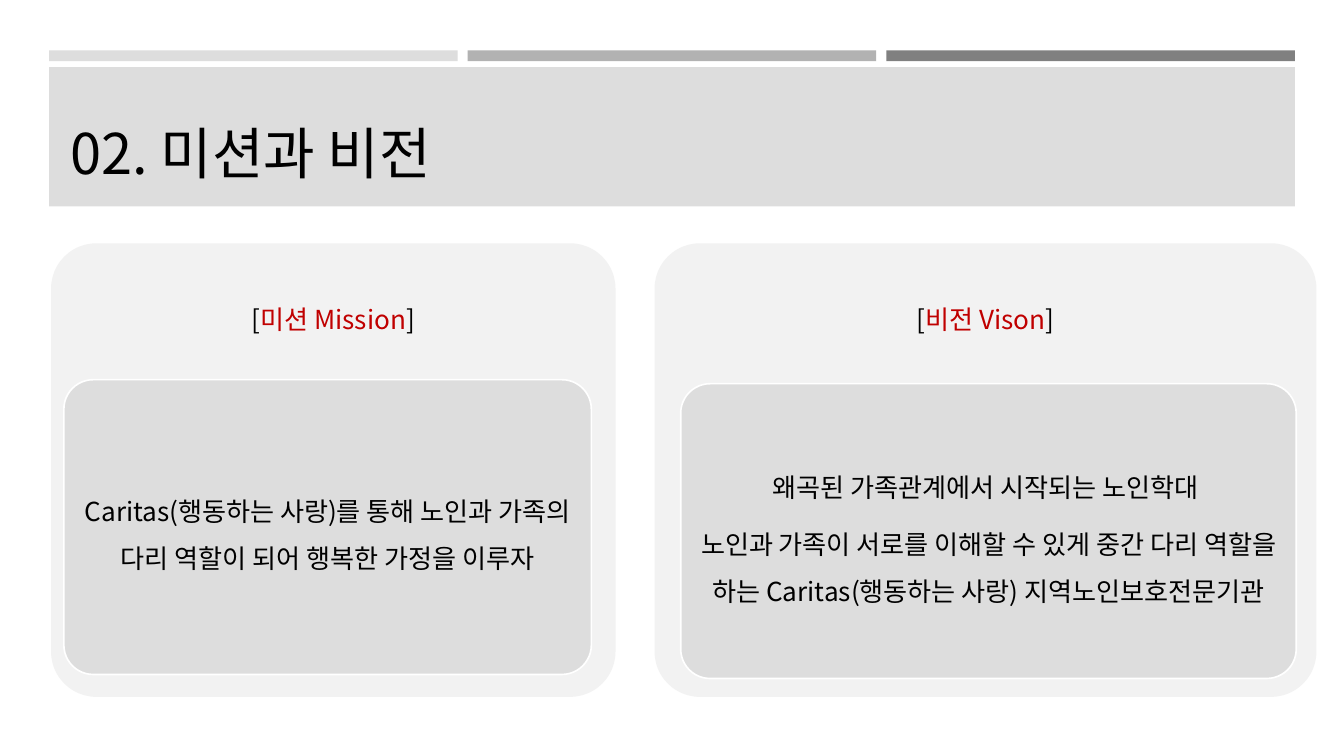
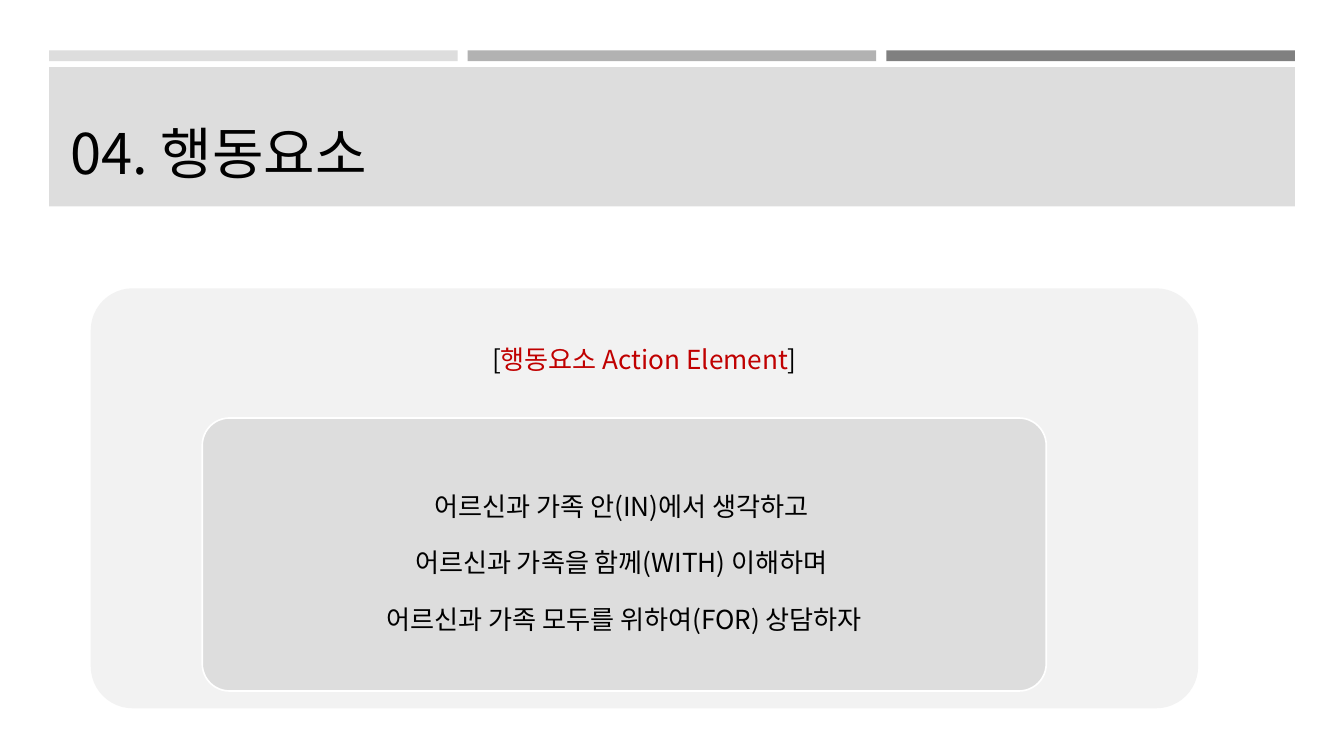
"""Build the mission, vision and action element slides."""
from dataclasses import dataclass

from lxml.etree import SubElement
from pptx import Presentation
from pptx.dml.color import RGBColor
from pptx.enum.shapes import MSO_SHAPE as Preset
from pptx.enum.text import MSO_ANCHOR as Anchor, MSO_AUTO_SIZE as AutoSize, PP_ALIGN as Align
from pptx.oxml.ns import qn
from pptx.util import Inches, Pt


@dataclass(frozen=True)
class Theme:
    font: str = "Noto Sans CJK KR"
    title_size: int = 60
    text_size: int = 28
    space_after: int = 10
    line_spacing: float = 1.5
    outline: float = 1.75
    text: str = "000000"
    accent: str = "C00000"
    light: str = "DDDDDD"
    medium: str = "B2B2B2"
    dark: str = "808080"
    panel: str = "F2F2F2"
    white: str = "FFFFFF"


THEME = Theme()
MARGIN, BAND_WIDTH, STRIP_WIDTH = 0.73, 18.54, 6.08
TITLE_BOX = (0.95, 1.15, 18.09, 1.66)
HEADING_SHARE, CARD_SHARE, CARD_INSET = 0.3, 0.65, 0.125

SLIDES = [
    {
        "title": "02. 미션과 비전",
        "panels": [
            {
                "box": (0.76, 3.62, 8.4, 6.75),
                "card": (0.95, 5.65, 7.85),
                "heading": "미션 Mission",
                "lines": ["Caritas(행동하는 사랑)를 통해 노인과 가족의 다리 역할이 되어 행복한 가정을 이루자"],
            },
            {
                "box": (9.74, 3.62, 9.85, 6.75),
                "card": (10.13, 5.71, 9.16),
                "heading": "비전 Vison",
                "lines": [
                    "왜곡된 가족관계에서 시작되는 노인학대 ",
                    "노인과 가족이 서로를 이해할 수 있게 중간 다리 역할을 하는 "
                    "Caritas(행동하는 사랑) 지역노인보호전문기관",
                ],
            },
        ],
    },
    {
        "title": "04. 행동요소",
        "panels": [
            {
                "box": (1.35, 4.29, 16.48, 6.25),
                "card": (3.01, 6.22, 12.56),
                "heading": "행동요소 Action Element",
                "lines": [
                    "어르신과 가족 안(IN)에서 생각하고 ",
                    "어르신과 가족을 함께(WITH) 이해하며 ",
                    "어르신과 가족 모두를 위하여(FOR) 상담하자",
                ],
            },
        ],
    },
]


def inches(box):
    return [Inches(value) for value in box]


def add_run(paragraph, text, size, color=THEME.text):
    run = paragraph.add_run()
    run.text = text
    run.font.size = Pt(size)
    run.font.name = THEME.font
    run.font.color.rgb = RGBColor.from_string(color)
    SubElement(run.font._element, qn("a:ea"), typeface=THEME.font)


def add_block(shapes, preset, box, fill, outline=None):
    shape = shapes.add_shape(preset, *inches(box))
    shape.shadow.inherit = False
    shape.fill.solid()
    shape.fill.fore_color.rgb = RGBColor.from_string(fill)
    if preset == Preset.ROUNDED_RECTANGLE:
        shape.adjustments[0] = 0.1
    if outline:
        shape.line.color.rgb = RGBColor.from_string(outline)
        shape.line.width = Pt(THEME.outline)
    else:
        shape.line.fill.background()
    return shape


def add_text(shapes, box, paragraphs, inset_x, inset_y):
    frame = shapes.add_textbox(*inches(box)).text_frame
    frame.word_wrap = True
    frame.vertical_anchor = Anchor.MIDDLE
    frame.margin_left = frame.margin_right = Inches(inset_x)
    frame.margin_top = frame.margin_bottom = Inches(inset_y)
    for index, runs in enumerate(paragraphs):
        paragraph = frame.add_paragraph() if index else frame.paragraphs[0]
        paragraph.alignment = Align.CENTER
        paragraph.line_spacing = THEME.line_spacing
        paragraph.space_after = Pt(THEME.space_after)
        for text, color in runs:
            add_run(paragraph, text, THEME.text_size, color)


def add_panel(slide, panel):
    shapes = slide.shapes.add_group_shape().shapes
    left, top, width, height = panel["box"]
    add_block(shapes, Preset.ROUNDED_RECTANGLE, panel["box"], THEME.panel)
    heading = [("[", THEME.text), (panel["heading"], THEME.accent), ("]", THEME.text)]
    add_text(shapes, (left, top, width, height * HEADING_SHARE), [heading], 0.12, 0.12)

    left, top, width = panel["card"]
    height *= CARD_SHARE
    add_block(shapes, Preset.ROUNDED_RECTANGLE, (left, top, width, height), THEME.light, THEME.white)
    text_box = (left + CARD_INSET, top + CARD_INSET, width - 2 * CARD_INSET, height - 2 * CARD_INSET)
    add_text(shapes, text_box, [[(line, THEME.text)] for line in panel["lines"]], 0.08, 0.06)


def style_layout(layout, slide):
    """Move the header band and strips behind the layout's title."""
    gap = (BAND_WIDTH - 3 * STRIP_WIDTH) / 2
    blocks = [
        ((MARGIN + index * (STRIP_WIDTH + gap), 0.75, STRIP_WIDTH, 0.16), color)
        for index, color in enumerate((THEME.light, THEME.medium, THEME.dark))
    ]
    blocks.append(((MARGIN, 1, BAND_WIDTH, 2.07), THEME.light))
    for index, (box, color) in enumerate(blocks):
        block = add_block(slide.shapes, Preset.RECTANGLE, box, color)
        layout.shapes.element.insert(2 + index, block.element)


def set_title(slide, text):
    title = slide.shapes.title
    title.left, title.top, title.width, title.height = inches(TITLE_BOX)
    frame = title.text_frame
    frame.auto_size = AutoSize.NONE
    frame.vertical_anchor = Anchor.BOTTOM
    paragraph = frame.paragraphs[0]
    paragraph.alignment = Align.LEFT
    add_run(paragraph, text, THEME.title_size)


def main():
    presentation = Presentation()
    presentation.slide_width, presentation.slide_height = Inches(20), Inches(11.25)
    layout = presentation.slide_layouts.get_by_name("Title Only")
    for index, content in enumerate(SLIDES):
        slide = presentation.slides.add_slide(layout)
        if index == 0:
            style_layout(layout, slide)
        set_title(slide, content["title"])
        for panel in content["panels"]:
            add_panel(slide, panel)
    presentation.save("out.pptx")


if __name__ == "__main__":
    main()
